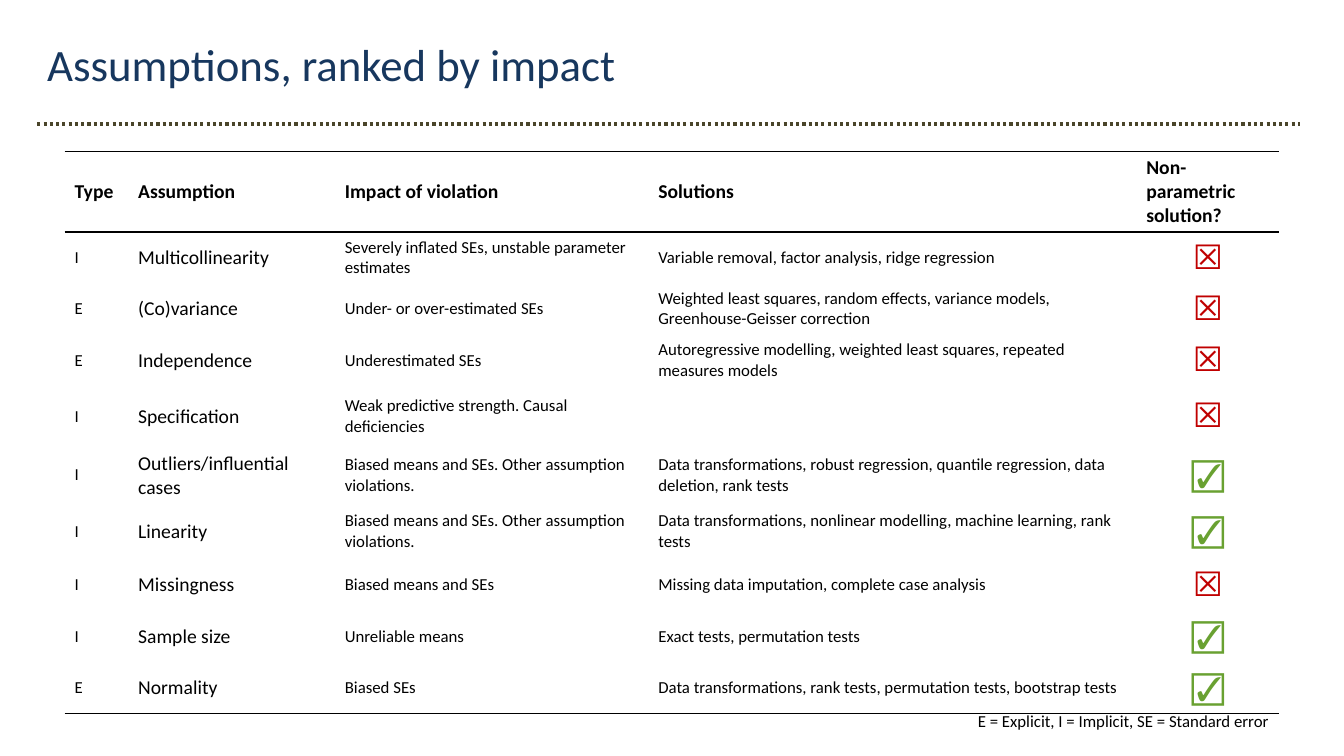
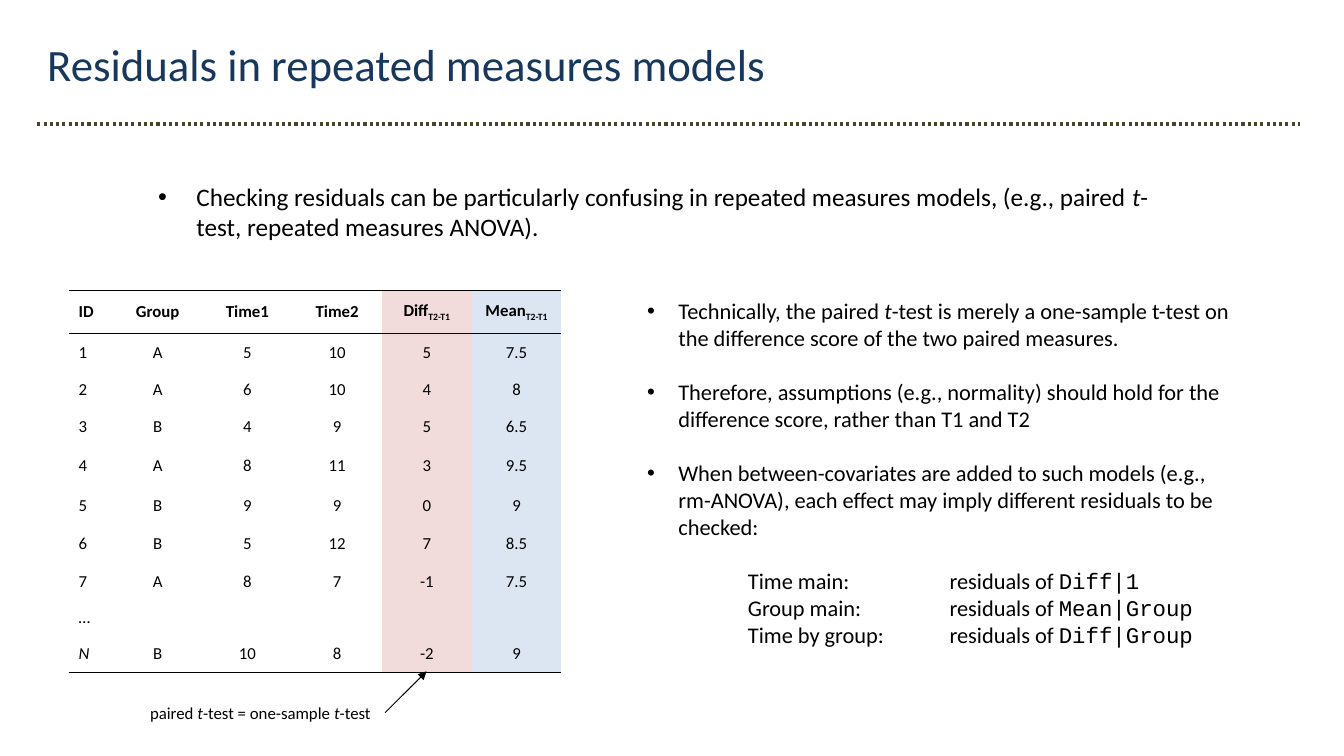
"""Build two slides on model assumptions and repeated measures residuals."""
from lxml import etree
from pptx import Presentation
from pptx import util as u
from pptx.dml.color import RGBColor
from pptx.enum import dml, shapes, text
from pptx.oxml import parse_xml
from pptx.oxml.ns import nsdecls, qn

INK, NAVY, OLIVE = "000000", "17375E", "4A452A"
RED, GREEN = "C00000", "69A131"
PINK, BLUE = "F2DCDB", "DCE6F2"
SANS, MONO, SERIF = "Calibri", "Courier New", "Times New Roman"
PLAIN = "{2D5ABB26-0587-4C30-8999-92F81FD0307C}"
hue = RGBColor.from_string
MID = text.PP_ALIGN.CENTER


def write(para, words, size=12, color=INK, face=SANS, bold=False, align=None, alt="italic"):
    """Fill a paragraph; parts between tildes take the alt format."""
    para.alignment = align
    for n, part in enumerate(words.split("~")):
        if not part:
            continue
        run = para.add_run()
        run.text = part
        font = run.font
        mark = alt if n % 2 else ""
        font.name = MONO if mark == "mono" else face
        font.size, font.bold = u.Pt(size), bold
        font.italic = mark == "italic"
        font.color.rgb = hue(color)
        if mark == "sub":
            font._element.set("baseline", "-25000")


def grid(slide, left, top, cols, rows, tints):
    """Add a plain table ruled above and below its head and at its foot."""
    size = u.Inches(sum(cols)), u.Inches(sum(rows))
    table = slide.shapes.add_table(len(rows), len(cols), u.Inches(left), u.Inches(top), *size).table
    table.first_row = table.horz_banding = False
    table._tbl.tblPr.find(qn("a:tableStyleId")).text = PLAIN
    for col, wide in zip(table.columns, cols):
        col.width = u.Inches(wide)
    for r, tall in enumerate(rows):
        table.rows[r].height = u.Inches(tall)
        edges = {0: ("lnT", "lnB"), len(rows) - 1: ("lnB",)}.get(r, ())
        for c in range(len(cols)):
            cell = table.cell(r, c)
            cell.vertical_anchor = text.MSO_ANCHOR.MIDDLE
            for edge in edges:
                cell._tc.get_or_add_tcPr().append(parse_xml(
                    f'<a:{edge} {nsdecls("a")} w="12700"><a:solidFill>'
                    f'<a:srgbClr val="{INK}"/></a:solidFill></a:{edge}>'))
            if c in tints:
                cell.fill.solid()
                cell.fill.fore_color.rgb = hue(tints[c])
            else:
                cell.fill.background()
    return table


deck = Presentation()
deck.slide_width, deck.slide_height = u.Inches(13.33), u.Inches(7.5)

slides = []
for title in ("Assumptions, ranked by impact", "Residuals in repeated measures models"):
    slide = deck.slides.add_slide(deck.slide_layouts[6])
    box = slide.shapes.add_textbox(u.Inches(0.37), u.Inches(0.32), u.Inches(11.65), u.Inches(0.64))
    box.text_frame.word_wrap = True
    write(box.text_frame.paragraphs[0], title, size=32, color=NAVY)
    rule = slide.shapes.add_connector(
        shapes.MSO_CONNECTOR.STRAIGHT, u.Inches(0.37), u.Inches(1.23), u.Inches(12.89), u.Inches(1.23))
    rule.line.color.rgb = hue(OLIVE)
    rule.line.width = u.Pt(2.25)
    rule.line.dash_style = dml.MSO_LINE.ROUND_DOT
    etree.SubElement(rule._element.spPr, qn("a:effectLst"))
    slides.append(slide)
ranks, repeats = slides

biased = "Biased means and SEs. Other assumption violations."
facts = [
    ("Type", "Assumption", "Impact of violation", "Solutions", "Non-parametric solution?"),
    ("I", "Multicollinearity", "Severely inflated SEs, unstable parameter estimates",
     "Variable removal, factor analysis, ridge regression", "☒"),
    ("E", "(Co)variance", "Under- or over-estimated SEs",
     "Weighted least squares, random effects, variance models, Greenhouse-Geisser correction", "☒"),
    ("E", "Independence", "Underestimated SEs",
     "Autoregressive modelling, weighted least squares, repeated measures models", "☒"),
    ("I", "Specification", "Weak predictive strength. Causal deficiencies", "", "☒"),
    ("I", "Outliers/influential cases", biased,
     "Data transformations, robust regression, quantile regression, data deletion, rank tests", "☑"),
    ("I", "Linearity", biased,
     "Data transformations, nonlinear modelling, machine learning, rank tests", "☑"),
    ("I", "Missingness", "Biased means and SEs",
     "Missing data imputation, complete case analysis", "☒"),
    ("I", "Sample size", "Unreliable means", "Exact tests, permutation tests", "☑"),
    ("E", "Normality", "Biased SEs",
     "Data transformations, rank tests, permutation tests, bootstrap tests", "☑"),
]
marks = {"☒": dict(size=24, color=RED, align=MID),
         "☑": dict(size=24, color=GREEN, face=SERIF, align=MID)}
table = grid(ranks, 0.64, 1.5, [0.63, 2.05, 3.11, 4.84, 1.42],
             [0.62, 0.51, 0.51, 0.51, 0.6, 0.55, 0.55, 0.51, 0.51, 0.51], {})
for r, row in enumerate(facts):
    for c, words in enumerate(row):
        plain = dict(size=14 if r == 0 or c == 1 else 12, bold=r == 0)
        write(table.cell(r, c).text_frame.paragraphs[0], words, **marks.get(words, plain))

scores = [
    ("ID", "Group", "Time1", "Time2", "Diff~T2-T1~", "Mean~T2-T1~"),
    ("1", "A", "5", "10", "5", "7.5"),
    ("2", "A", "6", "10", "4", "8"),
    ("3", "B", "4", "9", "5", "6.5"),
    ("4", "A", "8", "11", "3", "9.5"),
    ("5", "B", "9", "9", "0", "9"),
    ("6", "B", "5", "12", "7", "8.5"),
    ("7", "A", "8", "7", "-1", "7.5"),
    ("…", "", "", "", "", ""),
    ("~N~", "B", "10", "8", "-2", "9"),
]
table = grid(repeats, 0.68, 2.88, [0.44] + [0.89] * 5,
             [0.43, 0.38, 0.36, 0.36, 0.42, 0.38, 0.38, 0.36, 0.36, 0.36], {4: PINK, 5: BLUE})
for r, row in enumerate(scores):
    for c, words in enumerate(row):
        cell = table.cell(r, c)
        if not words:
            cell.margin_top = cell.margin_bottom = 0
        write(cell.text_frame.paragraphs[0], words, bold=r == 0,
              align=MID if c else None, alt="italic" if r else "sub")

intro = ["Checking residuals can be particularly confusing in repeated measures models, "
         "(e.g., paired ~t~-test, repeated measures ANOVA)."]
points = [
    "Technically, the paired ~t~-test is merely a one-sample t-test on the difference score "
    "of the two paired measures.",
    "Therefore, assumptions (e.g., normality) should hold for the difference score, "
    "rather than T1 and T2",
    "When between-covariates are added to such models (e.g., rm-ANOVA), each effect may imply "
    "different residuals to be checked:",
]
for items, size, hang, spot in ((intro, 18, 0.38, (1.47, 1.75, 10.39, 0.75)),
                                (points, 16, 0.31, (6.32, 2.9, 6.01, 3.6))):
    frame = repeats.shapes.add_textbox(*map(u.Inches, spot)).text_frame
    frame.word_wrap = True
    for n, words in enumerate(items):
        para = frame.add_paragraph() if n else frame.paragraphs[0]
        props = para._p.get_or_add_pPr()
        props.set("marL", str(u.Inches(hang)))
        props.set("indent", str(-u.Inches(hang)))
        etree.SubElement(props, qn("a:buFont")).set("typeface", "Arial")
        etree.SubElement(props, qn("a:buChar")).set("char", "•")
        if n:
            para.space_before = u.Pt(19.5)
        write(para, words, size=size)

effects = [("Time main:", "Diff|1"), ("Group main:", "Mean|Group"), ("Time by group:", "Diff|Group")]
for n, (name, model) in enumerate(effects):
    para = frame.add_paragraph()
    tabs = etree.SubElement(para._p.get_or_add_pPr(), qn("a:tabLst"))
    for stop in (1, 3):
        tab = etree.SubElement(tabs, qn("a:tab"))
        tab.set("pos", str(u.Inches(stop)))
        tab.set("algn", "l")
    if n == 0:
        para.space_before = u.Pt(19.5)
    write(para, f"\t{name}\tresiduals of ~{model}~", size=16, alt="mono")

for slide, words, left, top, wide in (
        (ranks, "E = Explicit, I = Implicit, SE = Standard error", 9.6, 7, 3.09),
        (repeats, "paired ~t~-test = one-sample ~t~-test", 1.39, 6.92, 2.43)):
    note = slide.shapes.add_textbox(u.Inches(left), u.Inches(top), u.Inches(wide), u.Inches(0.3))
    note.text_frame.word_wrap = False
    note.text_frame.auto_size = text.MSO_AUTO_SIZE.SHAPE_TO_FIT_TEXT
    write(note.text_frame.paragraphs[0], words)

arrow = repeats.shapes.add_connector(
    shapes.MSO_CONNECTOR.STRAIGHT, u.Inches(3.82), u.Inches(7.07), u.Inches(4.23), u.Inches(6.66))
arrow.begin_connect(note, 3)
arrow.line.color.rgb = hue(INK)
arrow.line.width = u.Pt(0.75)
etree.SubElement(arrow.line._get_or_add_ln(), qn("a:tailEnd")).set("type", "triangle")
etree.SubElement(arrow._element.spPr, qn("a:effectLst"))

deck.save("out.pptx")
